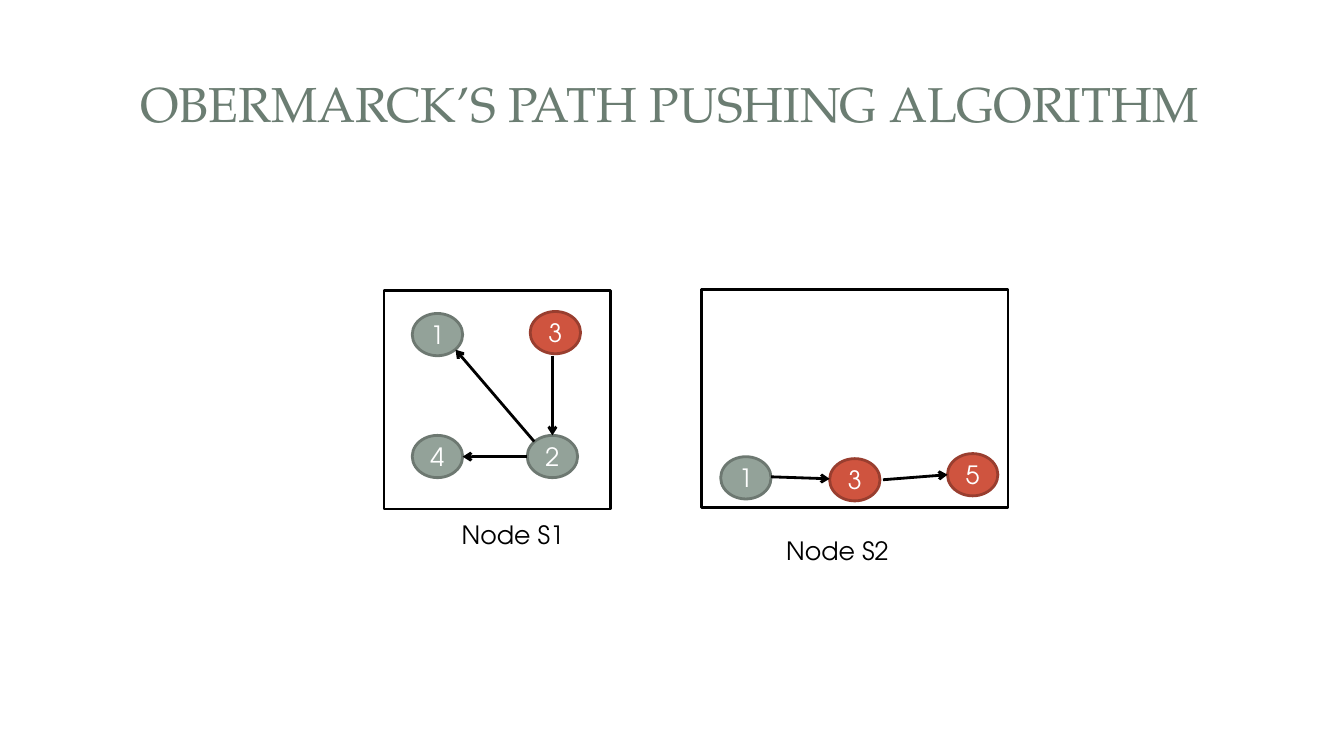
from lxml.etree import SubElement
from pptx import Presentation
from pptx.dml.color import RGBColor
from pptx.enum.shapes import MSO_CONNECTOR, MSO_SHAPE
from pptx.enum.text import MSO_ANCHOR, PP_ALIGN
from pptx.oxml.ns import qn
from pptx.util import Pt

WHITE = RGBColor(0xFF, 0xFF, 0xFF)
BLACK = RGBColor(0x00, 0x00, 0x00)
TITLE_GREEN = RGBColor(0x6B, 0x7D, 0x72)
SAGE = (RGBColor(0x93, 0xA2, 0x99), RGBColor(0x6D, 0x78, 0x71))
RED = (RGBColor(0xCF, 0x54, 0x3F), RGBColor(0x99, 0x3E, 0x2F))
TITLE_FONT = "TeX Gyre Pagella"
BODY_FONT = "TeX Gyre Adventor"
NODE_WIDTH, NODE_HEIGHT = 36, 30.2

SITE_FRAMES = [(501.1, 206.6, 218.9, 156.2), (274.3, 207.4, 162, 156.2)]
NODES = [
    ("4", 294.5, 311, SAGE),
    ("3", 378.7, 222.5, RED),
    ("2", 376.6, 311, SAGE),
    ("5", 676.8, 324, RED),
    ("3", 592.6, 327.6, RED),
    ("1", 514.8, 326.2, SAGE),
    ("1", 294.5, 223.9, SAGE),
]
WAITS = [
    (376.6, 326.2, 330.5, 326.2),
    (394.6, 254.2, 394.6, 311),
    (381.6, 315.4, 325.4, 249.8),
    (550.8, 340.6, 592.6, 342),
    (630.7, 342.7, 676.8, 339.1),
]
SITE_LABELS = [("Node S1", 322.6, 367.2), ("Node S2", 554.4, 378.7)]


def write(text_frame, text, size, font_name, color, alignment):
    """Fill a text frame with one formatted paragraph."""
    text_frame.text = text
    paragraph = text_frame.paragraphs[0]
    paragraph.alignment = alignment
    font = paragraph.runs[0].font
    font.size, font.name = Pt(size), font_name
    font.color.rgb = color


def set_title(slide, text):
    """Place and format the title placeholder."""
    title = slide.shapes.title
    title.left, title.top = Pt(44.6), Pt(32.4)
    title.width, title.height = Pt(867.6), Pt(82.1)
    title.text_frame.vertical_anchor = MSO_ANCHOR.MIDDLE
    write(title.text_frame, text, 35, TITLE_FONT, TITLE_GREEN, PP_ALIGN.CENTER)


def add_outlined(slide, kind, left, top, width, height, fill, line):
    """Add a filled shape with a two-point outline."""
    shape = slide.shapes.add_shape(kind, Pt(left), Pt(top), Pt(width), Pt(height))
    shape.shadow.inherit = False
    shape.fill.solid()
    shape.fill.fore_color.rgb = fill
    shape.line.color.rgb = line
    shape.line.width = Pt(2)
    return shape


def add_node(slide, text, left, top, colors):
    """Add a numbered transaction node."""
    node = add_outlined(slide, MSO_SHAPE.OVAL, left, top, NODE_WIDTH, NODE_HEIGHT, *colors)
    node.text_frame.vertical_anchor = MSO_ANCHOR.MIDDLE
    write(node.text_frame, text, 18, BODY_FONT, WHITE, PP_ALIGN.CENTER)


def add_arrow(slide, *ends):
    """Add a black arrow between two points."""
    arrow = slide.shapes.add_connector(MSO_CONNECTOR.STRAIGHT, *map(Pt, ends))
    arrow.line.color.rgb = BLACK
    arrow.line.width = Pt(2)
    SubElement(arrow.line._get_or_add_ln(), qn("a:tailEnd"), type="arrow")
    SubElement(arrow._element.spPr, qn("a:effectLst"))


def add_label(slide, text, left, top):
    """Add a caption under a site frame."""
    label = slide.shapes.add_textbox(Pt(left), Pt(top), Pt(88.6), Pt(28.8))
    label.text_frame.word_wrap = False
    write(label.text_frame, text, 18, BODY_FONT, BLACK, PP_ALIGN.LEFT)


def main():
    """Build the slide and save it."""
    presentation = Presentation()
    presentation.slide_width, presentation.slide_height = Pt(960), Pt(540)
    slide = presentation.slides.add_slide(presentation.slide_layouts[5])
    set_title(slide, "OBERMARCK’S PATH PUSHING ALGORITHM")
    for frame in SITE_FRAMES:
        add_outlined(slide, MSO_SHAPE.RECTANGLE, *frame, WHITE, BLACK)
    for node in NODES:
        add_node(slide, *node)
    for ends in WAITS:
        add_arrow(slide, *ends)
    for label in SITE_LABELS:
        add_label(slide, *label)
    presentation.save("out.pptx")


if __name__ == "__main__":
    main()
